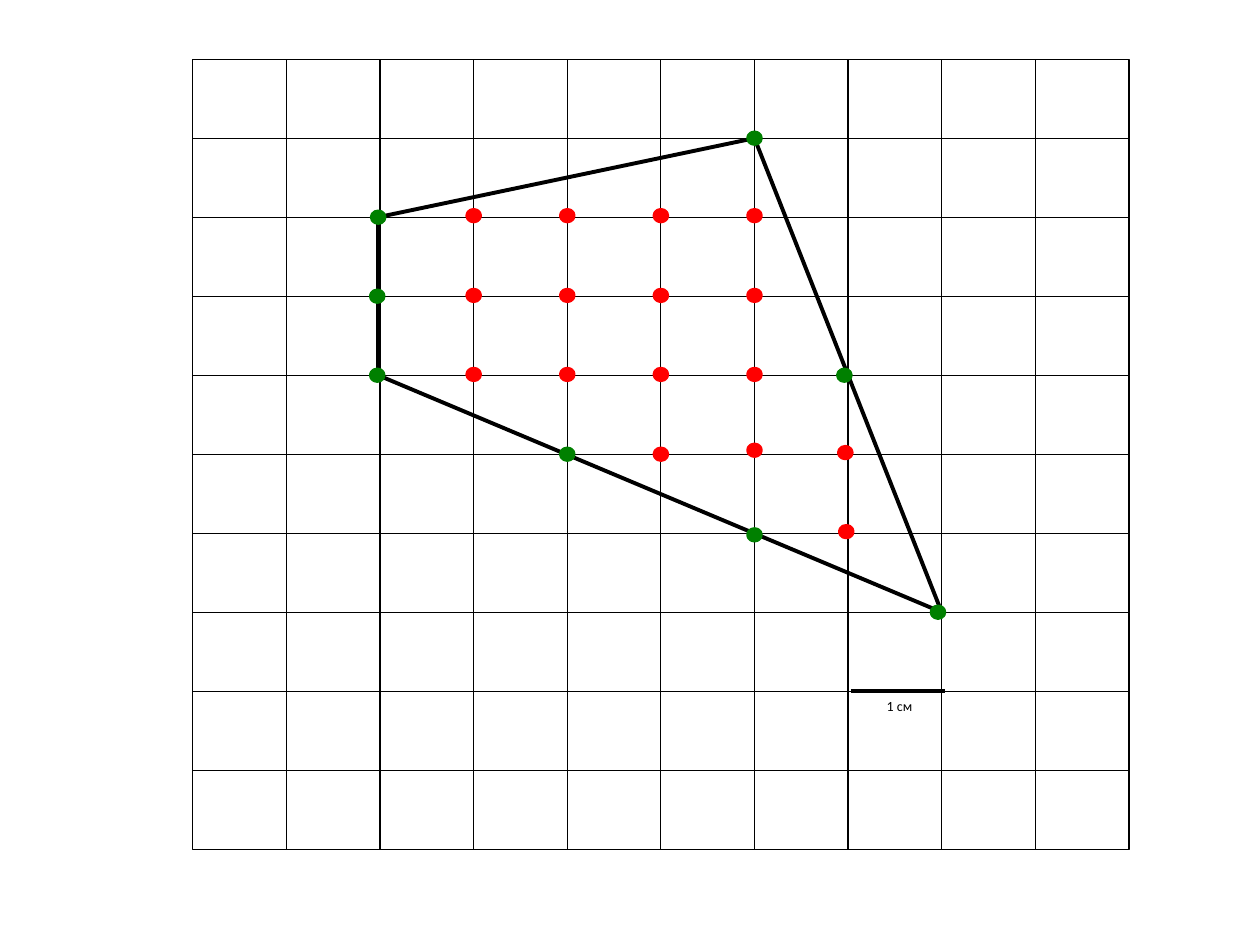
import dataclasses
import itertools

import lxml.etree
import pptx
import pptx.dml.color
import pptx.enum.shapes
import pptx.enum.text
import pptx.oxml.ns
import pptx.util
from pptx.util import Inches


@dataclasses.dataclass(frozen=True)
class Theme:
    paper: str = "FFFFFF"
    ink: str = "000000"
    inside: str = "FF0000"
    border: str = "008000"
    font: str = "Calibri"
    label_size: float = 8
    label_space: float = 10
    grid_line: float = 0.75
    edge_line: float = 2.25
    dot_line: float = 3


@dataclasses.dataclass(frozen=True)
class Box:
    left: float
    top: float
    width: float
    height: float
    cols: int
    rows: int

    @property
    def cell_w(self):
        return self.width / self.cols

    @property
    def cell_h(self):
        return self.height / self.rows

    def node(self, col, row):
        return self.left + col * self.cell_w, self.top + row * self.cell_h


THEME = Theme()
SHAPE = pptx.enum.shapes.MSO_SHAPE
SCALE_CELL = (7, 8)
SCALE_BAR = ((7.03, 8), (8.03, 8))
EDGES = [
    ((6, 1), (8, 7)),
    ((1.98, 4), (8, 7)),
    ((1.98, 2), (1.98, 4)),
    ((6, 1), (1.98, 2)),
]
BORDER_DOTS = [
    (6, 1), (1.98, 2), (1.97, 3), (1.97, 4),
    (4, 5), (6, 6.02), (6.96, 4), (7.96, 7),
]
INSIDE_DOTS = [
    *itertools.product(range(3, 7), (1.98, 2.99, 3.99)),
    (5, 5), (6, 4.95), (6.97, 4.98), (6.98, 5.98),
]


def rgb(value):
    return pptx.dml.color.RGBColor.from_string(value)


def add_filled(shapes, kind, left, top, width, height, fill, line, weight):
    sp = shapes.add_shape(kind, Inches(left), Inches(top), Inches(width), Inches(height))
    sp.shadow.inherit = False
    sp.fill.solid()
    sp.fill.fore_color.rgb = rgb(fill)
    sp.line.color.rgb = rgb(line)
    sp.line.width = pptx.util.Pt(weight)
    return sp


def add_edge(shapes, box, start, end):
    ends = [Inches(v) for v in box.node(*start) + box.node(*end)]
    line = shapes.add_connector(pptx.enum.shapes.MSO_CONNECTOR.STRAIGHT, *ends)
    line.line.color.rgb = rgb(THEME.ink)
    line.line.width = pptx.util.Pt(THEME.edge_line)
    lxml.etree.SubElement(line._element.spPr, pptx.oxml.ns.qn("a:effectLst"))


def add_scale_label(shapes, box, text):
    top = box.node(*SCALE_CELL)[1]
    sp = add_filled(shapes, SHAPE.RECTANGLE, 6.09, top, 2.1, box.cell_h,
                    THEME.paper, THEME.ink, THEME.grid_line)
    tf = sp.text_frame
    tf.word_wrap = True
    tf.vertical_anchor = pptx.enum.text.MSO_ANCHOR.TOP
    p = tf.paragraphs[0]
    p.alignment = pptx.enum.text.PP_ALIGN.CENTER
    p.space_after = pptx.util.Pt(THEME.label_space)
    r = p.add_run()
    r.text = text
    r.font.name = THEME.font
    r.font.size = pptx.util.Pt(THEME.label_size)
    r.font.color.rgb = rgb(THEME.ink)


def add_grid(shapes, box):
    add_scale_label(shapes, box, "1 см")
    for row, col in itertools.product(range(box.rows), range(box.cols)):
        if (col, row) != SCALE_CELL:
            add_filled(shapes, SHAPE.RECTANGLE, *box.node(col, row), box.cell_w, box.cell_h,
                       THEME.paper, THEME.ink, THEME.grid_line)


def add_dots(shapes, box, nodes, color, width=0.09, height=0.08):
    for node in nodes:
        x, y = box.node(*node)
        add_filled(shapes, SHAPE.FLOWCHART_CONNECTOR, x - width / 2, y - height / 2,
                   width, height, color, color, THEME.dot_line)


def add_lattice_polygon(s, box):
    shapes = s.shapes.add_group_shape().shapes
    add_grid(shapes, box)
    for start, end in EDGES:
        add_edge(shapes, box, start, end)
    add_dots(shapes, box, INSIDE_DOTS, THEME.inside)
    add_dots(shapes, box, BORDER_DOTS, THEME.border)
    add_edge(shapes, box, *SCALE_BAR)


def main():
    prs = pptx.Presentation()
    prs.slide_width = Inches(10)
    prs.slide_height = Inches(7.5)
    s = prs.slides.add_slide(prs.slide_layouts[6])
    add_lattice_polygon(s, Box(1.53, 0.47, 7.43, 6.27, 10, 10))
    prs.save("out.pptx")


if __name__ == "__main__":
    main()
